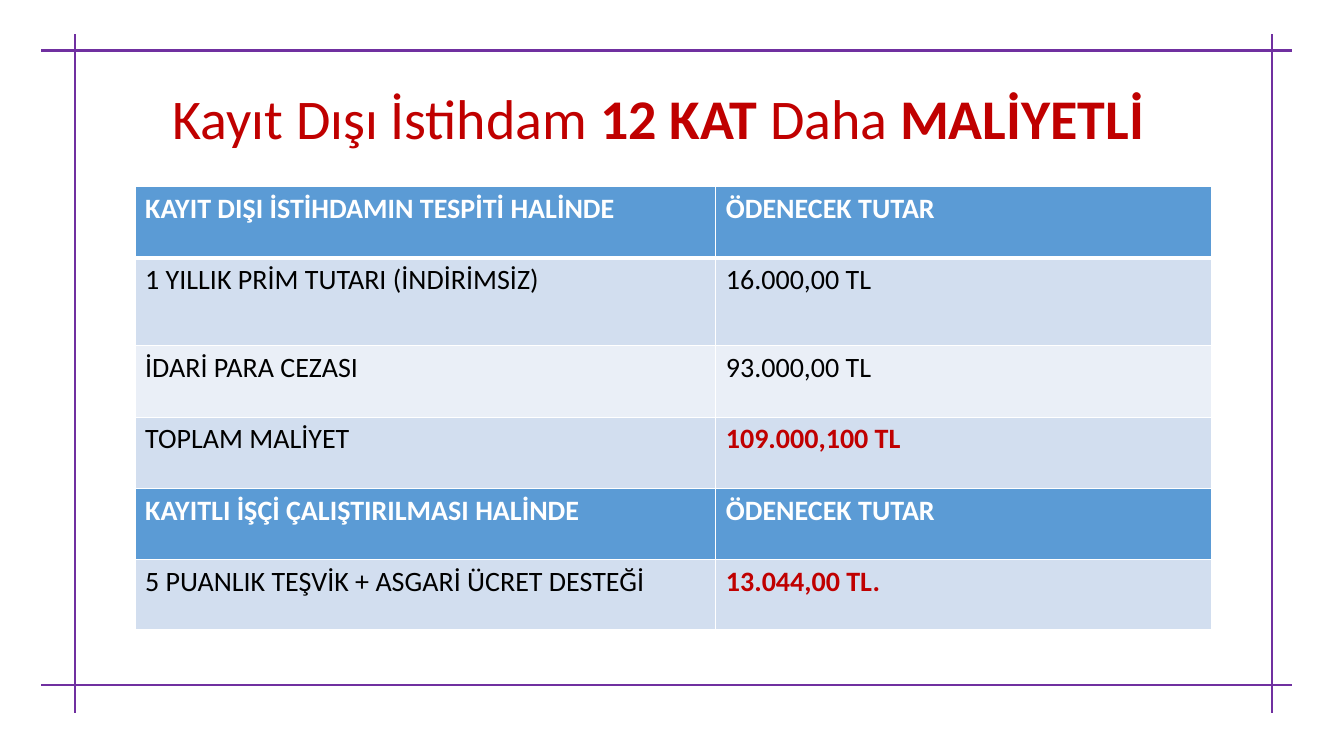
import pptx
import pptx.dml.color
import pptx.enum.shapes
import pptx.enum.text
import pptx.oxml
import pptx.oxml.ns
import pptx.util
from pptx.util import Inches

FONT = "Calibri"
WHITE, BLACK, RED, PURPLE = "FFFFFF", "000000", "C00000", "7030A0"
HEADER, BAND_DARK, BAND_LIGHT = "5B9BD5", "D2DEEF", "EAEFF7"

TITLE_RUNS = [("Kayıt Dışı İstihdam ", False), ("12 KAT ", True),
              ("Daha ", False), ("MALİYETLİ", True)]

# Label, amount, fill, label colour, amount colour, row height
COST_ROWS = [
    ("KAYIT DIŞI İSTİHDAMIN TESPİTİ HALİNDE", "ÖDENECEK TUTAR", HEADER, WHITE, WHITE, 0.71),
    ("1 YILLIK PRİM TUTARI (İNDİRİMSİZ)", "16.000,00 TL", BAND_DARK, BLACK, BLACK, 0.87),
    ("İDARİ PARA CEZASI", "93.000,00 TL", BAND_LIGHT, BLACK, BLACK, 0.71),
    ("TOPLAM MALİYET", "109.000,100 TL", BAND_DARK, BLACK, RED, 0.71),
    ("KAYITLI İŞÇİ ÇALIŞTIRILMASI HALİNDE", "ÖDENECEK TUTAR", HEADER, WHITE, WHITE, 0.7),
    ("5 PUANLIK TEŞVİK + ASGARİ ÜCRET DESTEĞİ", "13.044,00 TL.", BAND_DARK, BLACK, RED, 0.7),
]
COLUMN_WIDTHS = (5.76, 4.92)


def rgb(value):
    return pptx.dml.color.RGBColor.from_string(value)


def format_font(font, size, color, bold):
    font.name = FONT
    font.size = pptx.util.Pt(size)
    font.bold = bold
    font.color.rgb = rgb(color)


def set_borders(cell, bottom_width):
    """Give the cell white borders; call before setting its fill."""
    properties = cell._tc.get_or_add_tcPr()
    for side, width in (("L", 1), ("R", 1), ("T", 1), ("B", bottom_width)):
        properties.append(pptx.oxml.parse_xml(
            f'<a:ln{side} {pptx.oxml.ns.nsdecls("a")} w="{pptx.util.Pt(width)}">'
            f'<a:solidFill><a:srgbClr val="{WHITE}"/></a:solidFill></a:ln{side}>'))


def add_title(slide, left, top, width, height):
    shape = slide.shapes.add_textbox(Inches(left), Inches(top), Inches(width), Inches(height))
    shape.fill.solid()
    shape.fill.fore_color.rgb = rgb(WHITE)
    shape.text_frame.word_wrap = True
    paragraph = shape.text_frame.paragraphs[0]
    paragraph.alignment = pptx.enum.text.PP_ALIGN.CENTER
    paragraph.line_spacing = 0.9
    for text, bold in TITLE_RUNS:
        run = paragraph.add_run()
        run.text = text
        format_font(run.font, 40, RED, bold)


def add_cost_table(slide, left, top, width, height):
    table = slide.shapes.add_table(len(COST_ROWS), len(COLUMN_WIDTHS), Inches(left),
                                   Inches(top), Inches(width), Inches(height)).table
    for column, column_width in zip(table.columns, COLUMN_WIDTHS):
        column.width = Inches(column_width)
    for index, (label, amount, fill, label_color, amount_color, row_height) in enumerate(COST_ROWS):
        table.rows[index].height = Inches(row_height)
        for cell, text, color in zip(table.rows[index].cells, (label, amount),
                                     (label_color, amount_color)):
            set_borders(cell, 3 if index == 0 else 1)
            cell.fill.solid()
            cell.fill.fore_color.rgb = rgb(fill)
            cell.text_frame.text = text
            format_font(cell.text_frame.paragraphs[0].runs[0].font, 20, color, color != BLACK)


def add_frame(slide, left, top, width, height):
    """Draw four lines that cross near the corners of the box."""
    right, bottom = left + width, top + height
    inset_x, inset_top, inset_bottom = (0.33, 0.19), 0.16, 0.27
    lines = [
        (left, top + inset_top, right, top + inset_top, 2.25),
        (left + inset_x[0], bottom, left + inset_x[0], top, 1.5),
        (right - inset_x[1], bottom, right - inset_x[1], top, 1.5),
        (left, bottom - inset_bottom, right, bottom - inset_bottom, 1.5),
    ]
    for start_x, start_y, end_x, end_y, line_width in lines:
        connector = slide.shapes.add_connector(
            pptx.enum.shapes.MSO_CONNECTOR.STRAIGHT,
            Inches(start_x), Inches(start_y), Inches(end_x), Inches(end_y))
        connector.line.color.rgb = rgb(PURPLE)
        connector.line.width = pptx.util.Pt(line_width)
        connector._element.spPr.append(
            pptx.oxml.parse_xml(f'<a:effectLst {pptx.oxml.ns.nsdecls("a")}/>'))


def main():
    presentation = pptx.Presentation()
    presentation.slide_width = Inches(13.33)
    presentation.slide_height = Inches(7.5)
    slide = presentation.slides.add_slide(presentation.slide_layouts[6])
    add_title(slide, 0.25, 0.86, 12.56, 1.13)
    add_cost_table(slide, 1.34, 1.85, sum(COLUMN_WIDTHS), sum(row[-1] for row in COST_ROWS))
    add_frame(slide, 0.41, 0.34, 12.4, 6.73)
    presentation.save("out.pptx")


if __name__ == "__main__":
    main()
